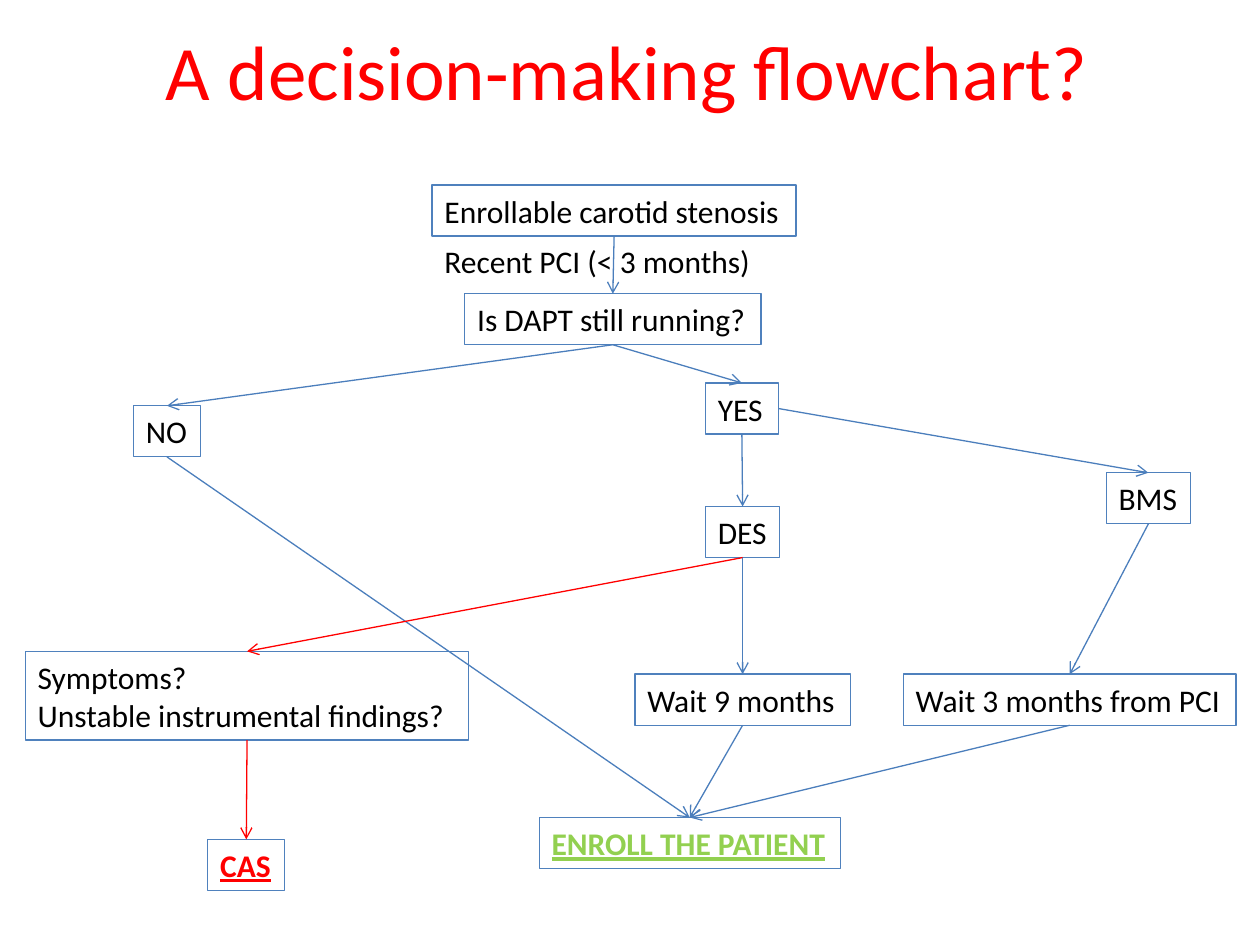
"""Build a one-slide flowchart for enrolling carotid stenosis patients after PCI."""
from dataclasses import dataclass

from lxml import etree
from pptx import Presentation
from pptx import util as u
from pptx.dml.color import RGBColor
from pptx.enum import shapes, text
from pptx.oxml.ns import qn


@dataclass(frozen=True)
class Theme:
    font: str = "Calibri"
    title_size: int = 44
    body_size: int = 18
    line_width: float = 0.75
    ink: str = "000000"
    alert: str = "FF0000"
    enroll: str = "92D050"
    border: str = "4F81BD"
    arrow: str = "4B7EBC"


theme = Theme()
TOP, LEFT, BOTTOM, RIGHT = 0, 1, 2, 3
ROW = 1.03


def write(shape, words, size, color, strong=False, align=text.PP_ALIGN.LEFT):
    frame = shape.text_frame
    frame.word_wrap = True
    frame.margin_right = 0 if align == text.PP_ALIGN.LEFT else frame.margin_left
    frame.vertical_anchor = text.MSO_ANCHOR.MIDDLE
    frame.text = words
    for paragraph in frame.paragraphs:
        paragraph.alignment = align
        font = paragraph.font
        font.name, font.size = theme.font, u.Pt(size)
        font.color.rgb = RGBColor.from_string(color)
        if strong:
            font.bold = font.underline = True


deck = Presentation()
deck.slide_width, deck.slide_height = u.Cm(25.4), u.Cm(19.05)
slide = deck.slides.add_slide(deck.slide_layouts[6])

title = slide.shapes.add_textbox(u.Cm(-0.1), u.Cm(0), u.Cm(25.5), u.Cm(2.8))
write(title, "A decision-making flowchart?", theme.title_size, theme.alert,
      align=text.PP_ALIGN.CENTER)

steps = {
    "stenosis": ("Enrollable carotid stenosis", 8.71, 3.73, 7.34, ROW, theme.ink),
    "dapt": ("Is DAPT still running?", 9.37, 5.92, 5.97, ROW, theme.ink),
    "no": ("NO", 2.69, 8.18, 1.35, ROW, theme.ink),
    "yes": ("YES", 14.22, 7.72, 1.47, ROW, theme.ink),
    "bms": ("BMS", 22.3, 9.53, 1.7, ROW, theme.ink),
    "des": ("DES", 14.22, 10.21, 1.5, ROW, theme.ink),
    "symptoms": ("Symptoms?\nUnstable instrumental findings?",
                 0.51, 13.13, 8.94, 1.79, theme.ink),
    "wait 9": ("Wait 9 months", 12.8, 13.59, 4.34, ROW, theme.ink),
    "wait 3": ("Wait 3 months from PCI", 18.21, 13.59, 6.71, ROW, theme.ink),
    "enroll": ("ENROLL THE PATIENT", 10.87, 16.48, 6.07, ROW, theme.enroll),
    "cas": ("CAS", 4.19, 16.92, 1.55, ROW, theme.alert),
}
boxes = {}
for step, (words, left, top, width, height, color) in steps.items():
    box = slide.shapes.add_shape(shapes.MSO_SHAPE.RECTANGLE, u.Cm(left), u.Cm(top),
                                 u.Cm(width), u.Cm(height))
    box.shadow.inherit = False
    box.fill.background()
    box.line.color.rgb = RGBColor.from_string(theme.border)
    box.line.width = u.Pt(theme.line_width)
    write(box, words, theme.body_size, color, strong=color != theme.ink)
    boxes[step] = box

recent_pci = slide.shapes.add_textbox(u.Cm(8.71), u.Cm(4.75), u.Cm(7.34), u.Cm(ROW))
write(recent_pci, "Recent PCI (< 3 months)", theme.body_size, theme.ink)

routes = [
    ("stenosis", BOTTOM, "dapt", theme.arrow),
    ("dapt", BOTTOM, "no", theme.arrow),
    ("dapt", BOTTOM, "yes", theme.arrow),
    ("no", BOTTOM, "enroll", theme.arrow),
    ("yes", RIGHT, "bms", theme.arrow),
    ("yes", BOTTOM, "des", theme.arrow),
    ("bms", BOTTOM, "wait 3", theme.arrow),
    ("wait 3", BOTTOM, "enroll", theme.arrow),
    ("des", BOTTOM, "symptoms", theme.alert),
    ("symptoms", BOTTOM, "cas", theme.alert),
    ("des", BOTTOM, "wait 9", theme.arrow),
    ("wait 9", BOTTOM, "enroll", theme.arrow),
]
for source, side, target, color in routes:
    route = slide.shapes.add_connector(shapes.MSO_CONNECTOR.STRAIGHT, 0, 0, 0, 0)
    route.begin_connect(boxes[source], side)
    route.end_connect(boxes[target], TOP)
    route.line.color.rgb = RGBColor.from_string(color)
    route.line.width = u.Pt(theme.line_width)
    properties = route.line._get_or_add_ln()
    etree.SubElement(properties, qn("a:tailEnd"), type="arrow")
    etree.SubElement(properties.getparent(), qn("a:effectLst"))

deck.save("out.pptx")
